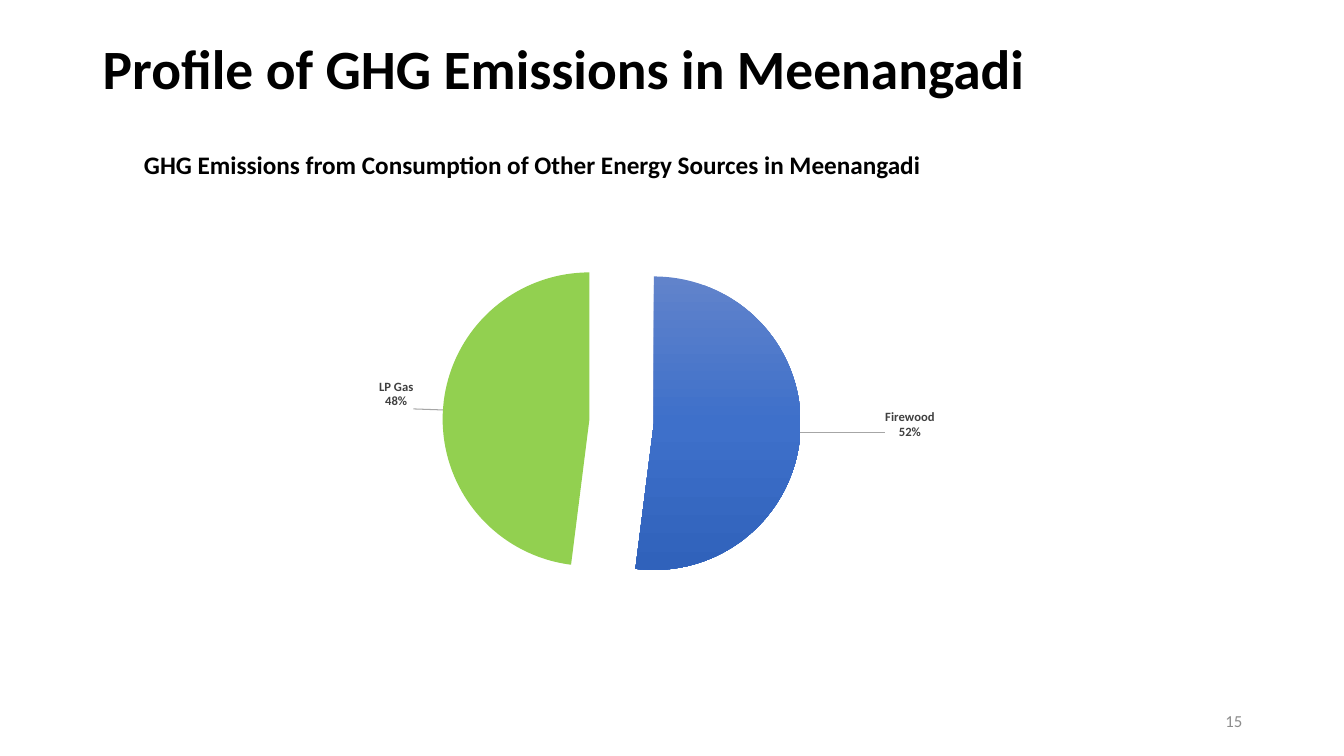
from copy import deepcopy
from dataclasses import dataclass

from lxml.etree import SubElement
from pptx import Presentation
from pptx.chart.data import CategoryChartData
from pptx.dml.color import RGBColor
from pptx.enum.chart import XL_CHART_TYPE, XL_LABEL_POSITION
from pptx.enum.text import MSO_ANCHOR, PP_ALIGN
from pptx.oxml import parse_xml
from pptx.oxml.ns import nsdecls, qn
from pptx.util import Inches, Pt


@dataclass(frozen=True)
class Theme:
    font: str = "Calibri"
    ink: str = "000000"
    label: str = "404040"
    muted: str = "8C8C8C"
    leader: str = "A6A6A6"
    wood: tuple = ((0, "6183CB"), (0.5, "3E70CA"), (1, "3062BB"))
    gas: str = "92D050"
    title: float = 39.6
    head: float = 18
    page: float = 12
    chart: float = 10
    tag: float = 9


def make(xml):
    """Build a chart element, adding the namespaces to its root tag."""
    name, rest = xml[1:].split(" ", 1)
    return parse_xml(f"<{name} {nsdecls('c', 'a')} {rest}")


class Board:
    def __init__(self, slide, theme):
        self.slide, self.theme = slide, theme

    def style(self, font, size, color, bold=False):
        font.name, font.size, font.bold = self.theme.font, Pt(size), bold
        font.color.rgb = RGBColor.from_string(color)

    def text(self, words, box, size, color, bold=False,
             anchor=MSO_ANCHOR.TOP, align=PP_ALIGN.LEFT, space=1.0):
        frame = self.slide.shapes.add_textbox(*map(Inches, box)).text_frame
        frame.word_wrap = True
        frame.vertical_anchor = anchor
        para = frame.paragraphs[0]
        para.alignment, para.line_spacing = align, space
        run = para.add_run()
        run.text = words
        self.style(run.font, size, color, bold)

    def paint(self, point, color):
        """Fill a slice with one colour or with a vertical blend of stops."""
        fill = point.format.fill
        point.format.line.fill.background()
        if isinstance(color, str):
            fill.solid()
            fill.fore_color.rgb = RGBColor.from_string(color)
            return
        fill.gradient()
        fill.gradient_angle = 270
        first = fill.gradient_stops[0]._gs
        for _ in range(len(color) - len(fill.gradient_stops)):
            first.addnext(deepcopy(first))
        for stop, (place, shade) in zip(fill.gradient_stops, color):
            stop.position = place
            stop.color.rgb = RGBColor.from_string(shade)

    def tag(self, point, shift):
        """Label a slice with its name and share, moved by a chart fraction."""
        label = point.data_label
        self.style(label.font, self.theme.tag, self.theme.label, True)
        label.position = XL_LABEL_POSITION.OUTSIDE_END
        node = label._dLbl
        node.find(qn("c:showCatName")).set("val", "1")
        node.find(qn("c:showVal")).set("val", "1")
        x, y = shift
        place = make(f'<c:layout ><c:manualLayout><c:x val="{x}"/>'
                     f'<c:y val="{y}"/></c:manualLayout></c:layout>')
        node.find(qn("c:idx")).addnext(place)
        place.addnext(make('<c:numFmt formatCode="0%" sourceLinked="0"/>'))
        SubElement(node, qn("c:separator")).text = "\n"

    def pie(self, parts, box, plot, gap):
        data = CategoryChartData(number_format="0%")
        data.categories = [name for name, *_ in parts]
        data.add_series("Series 1", [share for _, share, *_ in parts])
        chart = self.slide.shapes.add_chart(
            XL_CHART_TYPE.PIE, *map(Inches, box), data).chart
        chart.has_legend = chart.has_title = False
        self.style(chart.font, self.theme.chart, self.theme.ink)
        chart.plots[0].vary_by_categories = True

        # Plot area
        area = chart._chartSpace.chart.plotArea
        for old in area.findall(qn("c:layout")):
            area.remove(old)
        sides = "".join(f'<c:{k} val="{v}"/>' for k, v in zip("xywh", plot))
        area.insert(0, make(
            '<c:layout ><c:manualLayout><c:layoutTarget val="inner"/>'
            '<c:xMode val="edge"/><c:yMode val="edge"/>'
            f'{sides}</c:manualLayout></c:layout>'))

        # Labels shared by all slices
        row = chart.plots[0].series[0]
        tags = row.data_labels
        self.style(tags.font, self.theme.tag, self.theme.label, True)
        tags.number_format, tags.number_format_is_linked = "0%", False
        tags.show_value = tags.show_category_name = True
        tags.position = XL_LABEL_POSITION.OUTSIDE_END
        tags._element.append(make(
            '<c:leaderLines ><c:spPr><a:ln w="9525"><a:solidFill>'
            f'<a:srgbClr val="{self.theme.leader}"/></a:solidFill></a:ln>'
            '</c:spPr></c:leaderLines>'))

        # Slices
        for i, (_, _, color, shift) in enumerate(parts):
            self.paint(row.points[i], color)
            self.tag(row.points[i], shift)
        row._element.find(qn("c:dPt")).addprevious(
            make(f'<c:explosion val="{gap}"/>'))


def main():
    deck = Presentation()
    deck.slide_width, deck.slide_height = Inches(13.33), Inches(7.5)
    theme = Theme()
    board = Board(deck.slides.add_slide(deck.slide_layouts[6]), theme)

    # Headings
    board.text("Profile of GHG Emissions in Meenangadi",
               (0.92, 0.4, 10.71, 0.62), theme.title, theme.ink, True,
               MSO_ANCHOR.MIDDLE, space=0.9)
    board.text("GHG Emissions from Consumption of Other Energy Sources "
               "in Meenangadi", (1.33, 1.43, 11.46, 0.4),
               theme.head, theme.ink, True)

    # Energy sources
    board.pie([("Firewood", 0.52, theme.wood, (0.1, -0.02)),
               ("LP Gas", 0.48, theme.gas, (-0.03, -0.04))],
              (2.33, 2.25, 7.83, 3.82), (0.26, 0.04, 0.46, 0.93), 22)

    # Page number
    board.text("15", (9.42, 6.95, 3, 0.4), theme.page, theme.muted,
               anchor=MSO_ANCHOR.MIDDLE, align=PP_ALIGN.RIGHT)
    deck.save("out.pptx")


if __name__ == "__main__":
    main()
